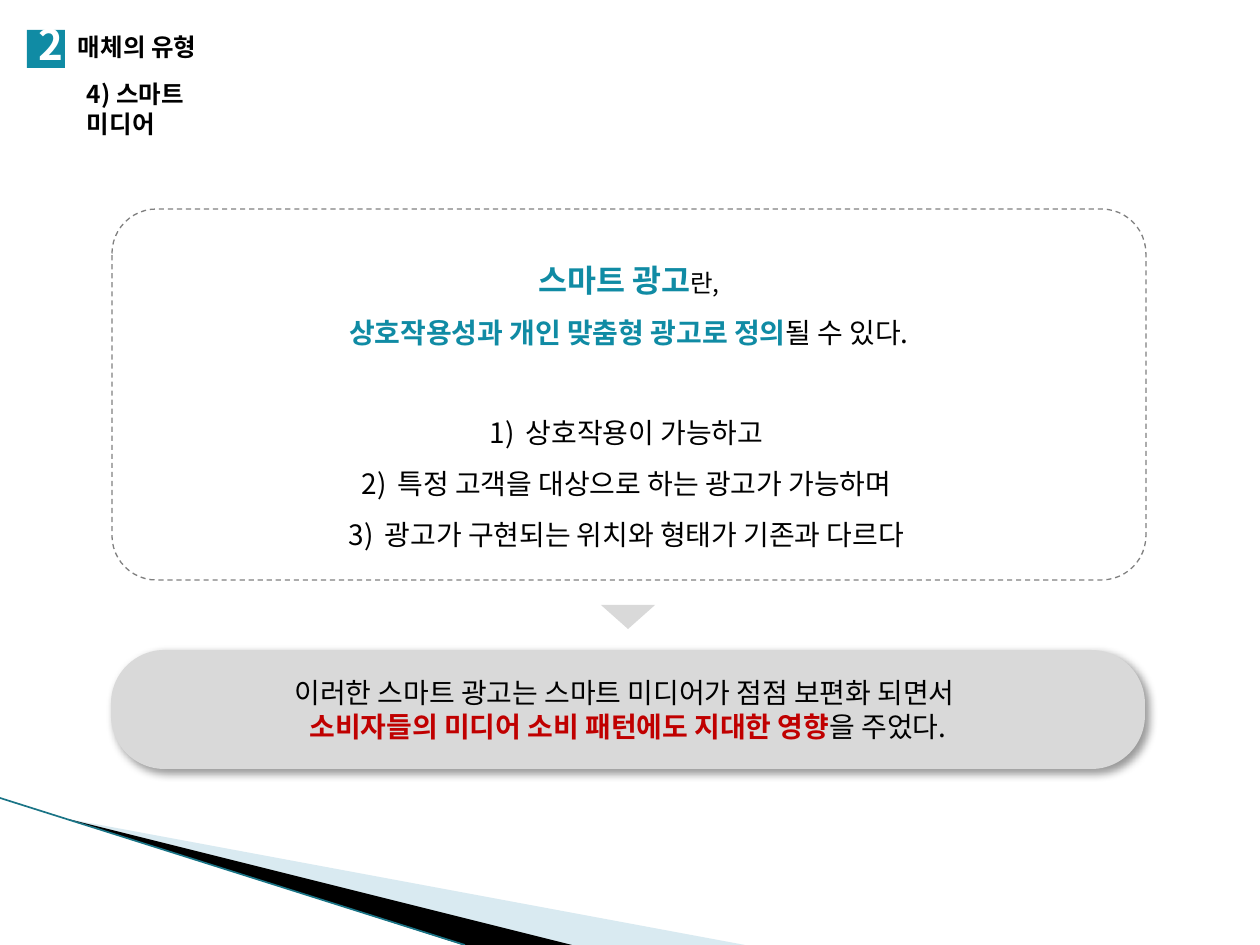
from collections import namedtuple

from lxml import etree
from pptx import Presentation
from pptx import util as u
from pptx.dml.color import RGBColor
from pptx.enum import dml, shapes, text
from pptx.oxml import ns

PX = u.Inches(1) / 126
FONT = "Noto Sans CJK KR"
TEAL = RGBColor(0x10, 0x8B, 0xA4)
DARK_TEAL = RGBColor(0x1A, 0x74, 0x86)
PALE_BLUE = RGBColor(0xA0, 0xCB, 0xDC)
GRAY = RGBColor(0x80, 0x80, 0x80)
LIGHT_GRAY = RGBColor(0xD9, 0xD9, 0xD9)
RED = RGBColor(0xC0, 0x00, 0x00)
BLACK = RGBColor(0x00, 0x00, 0x00)
WHITE = RGBColor(0xFF, 0xFF, 0xFF)

Box = namedtuple("Box", "left top width height")
Span = namedtuple("Span", "text size color bold", defaults=(16, BLACK, False))


def px(count):
    return u.Emu(round(count * PX))


def inside(box, left, top, width, height):
    """Return a box given relative to the corner of another one."""
    return Box(box.left + left, box.top + top, width, height)


def add_xml(parent, tag, **attributes):
    return etree.SubElement(parent, ns.qn(tag), attributes)


def place(shape, box):
    shape.left, shape.top, shape.width, shape.height = map(px, box)


def add_shape(page, kind, box, fill=None):
    shape = page.shapes.add_shape(kind, *map(px, box))
    shape.shadow.inherit = False
    shape.line.fill.background()
    if fill is None:
        shape.fill.background()
    else:
        shape.fill.solid()
        shape.fill.fore_color.rgb = fill
    return shape


def write(shape, *lines, align=text.PP_ALIGN.LEFT, anchor=text.MSO_ANCHOR.TOP,
          spacing=None, insets=(13, 6, 13, 6), numbered_from=None, gap=0):
    """Fill a shape with lines of spans; the lines from numbered_from on are
    numbered, and gap points stand before the first of them."""
    frame = shape.text_frame
    frame.word_wrap = True
    frame.auto_size = text.MSO_AUTO_SIZE.NONE
    frame.vertical_anchor = anchor
    (frame.margin_left, frame.margin_top,
     frame.margin_right, frame.margin_bottom) = map(px, insets)
    for index, spans in enumerate(lines):
        para = frame.add_paragraph() if index else frame.paragraphs[0]
        para.alignment = align
        if spacing:
            para.line_spacing = u.Pt(spacing)
        if numbered_from is not None and index >= numbered_from:
            if index == numbered_from:
                para.space_before = u.Pt(gap)
            properties = para._p.get_or_add_pPr()
            add_xml(properties, "a:buFont", typeface=FONT)
            add_xml(properties, "a:buAutoNum", type="arabicParenR")
        for span in spans:
            for part, words in enumerate(span.text.split("\n")):
                if part:
                    para.add_line_break()
                if words:
                    add_run(para, words, span)


def add_run(para, words, span):
    run = para.add_run()
    run.text = words
    run.font.size = u.Pt(span.size)
    run.font.bold = span.bold
    run.font.color.rgb = span.color
    run.font.name = FONT
    add_xml(run.font._element, "a:ea", typeface=FONT)


def add_wedge(page, points, color, alpha=None):
    builder = page.shapes.build_freeform(*points[0], scale=PX)
    builder.add_line_segments(points[1:])
    wedge = builder.convert_to_shape()
    wedge.shadow.inherit = False
    wedge.line.fill.background()
    wedge.fill.solid()
    wedge.fill.fore_color.rgb = color
    if alpha:
        color_node = wedge._element.spPr.find(".//" + ns.qn("a:srgbClr"))
        add_xml(color_node, "a:alpha", val=str(alpha * 1000))


def add_corner_decoration(page, box):
    left, top = box.left, box.top
    bottom = top + box.height
    tip = (left + 68, top + 21)
    add_wedge(page, [tip, (left + box.width, bottom), (left + 570, bottom)],
              PALE_BLUE, alpha=40)
    add_wedge(page, [tip, (left + 572, bottom), (left + 463, bottom)], BLACK)
    edge = page.shapes.add_connector(
        shapes.MSO_CONNECTOR.STRAIGHT,
        px(left), px(top), px(left + 465), px(bottom))
    edge.line.color.rgb = DARK_TEAL
    edge.line.width = u.Pt(0.95)
    add_xml(edge._element.spPr, "a:effectLst")


def add_heading(page, box):
    add_shape(page, shapes.MSO_SHAPE.RECTANGLE, inside(box, 0, 5, 38, 38), TEAL)
    number = page.shapes.add_textbox(*map(px, inside(box, 12, -6, 24, 61)))
    write(number, [Span("2", 24, WHITE, True)], insets=(0, 0, 0, 0))
    title = page.shapes.title
    place(title, inside(box, 38, 0, 341, 43))
    write(title, [Span("매체의 유형", 14, BLACK, True)],
          anchor=text.MSO_ANCHOR.MIDDLE)
    subtitle = page.shapes.add_textbox(*map(px, inside(box, 47, 48, 140, 72)))
    write(subtitle, [Span("4) 스마트 미디어", 14, BLACK, True)], spacing=17)


def add_definition(page, box):
    panel = add_shape(page, shapes.MSO_SHAPE.ROUNDED_RECTANGLE, box)
    panel.adjustments[0] = 0.12
    panel.line.color.rgb = GRAY
    panel.line.width = u.Pt(0.75)
    panel.line.dash_style = dml.MSO_LINE.DASH
    write(panel,
          [Span("스마트 광고", 18, TEAL, True), Span("란,", 14)],
          [Span("상호작용성과 개인 맞춤형 광고로 정의", 16, TEAL, True),
           Span("될 수 있다.")],
          [Span(" 상호작용이 가능하고")],
          [Span(" 특정 고객을 대상으로 하는 광고가 가능하며")],
          [Span(" 광고가 구현되는 위치와 형태가 기존과 다르다")],
          align=text.PP_ALIGN.CENTER, spacing=29, insets=(13, 26, 13, 6),
          numbered_from=2, gap=28)


def add_conclusion(page, box):
    """Add the arrow at the top of the box and the gray pill below it."""
    arrow = add_shape(page, shapes.MSO_SHAPE.ISOSCELES_TRIANGLE,
                      inside(box, (box.width - 54) / 2, 0, 54, 24), LIGHT_GRAY)
    arrow.rotation = 180
    pill = add_shape(page, shapes.MSO_SHAPE.ROUNDED_RECTANGLE,
                     inside(box, 0, 45, box.width, box.height - 45), LIGHT_GRAY)
    pill.adjustments[0] = 0.45
    effects = pill._element.spPr.find(ns.qn("a:effectLst"))
    shadow = add_xml(effects, "a:outerShdw", blurRad=str(u.Pt(5)),
                     dist=str(u.Pt(3)), dir=str(45 * 60000), algn="tl",
                     rotWithShape="0")
    add_xml(add_xml(shadow, "a:srgbClr", val=str(BLACK)), "a:alpha", val="40000")
    write(pill,
          [Span("이러한 스마트 광고는 스마트 미디어가 점점 보편화 되면서 \n"),
           Span("소비자들의 미디어 소비 패턴에도 지대한 영향", 16, RED, True),
           Span("을 주었다.")],
          align=text.PP_ALIGN.CENTER, anchor=text.MSO_ANCHOR.MIDDLE, spacing=19.5)


def main():
    deck = Presentation()
    deck.slide_width, deck.slide_height = px(1260), px(945)
    page = deck.slides.add_slide(deck.slide_layouts[5])
    add_corner_decoration(page, Box(0, 798, 745, 147))
    add_definition(page, Box(112, 209, 1034, 371))
    add_conclusion(page, Box(111, 605, 1034, 164))
    add_heading(page, Box(27, 25, 379, 120))
    deck.save("out.pptx")


if __name__ == "__main__":
    main()
